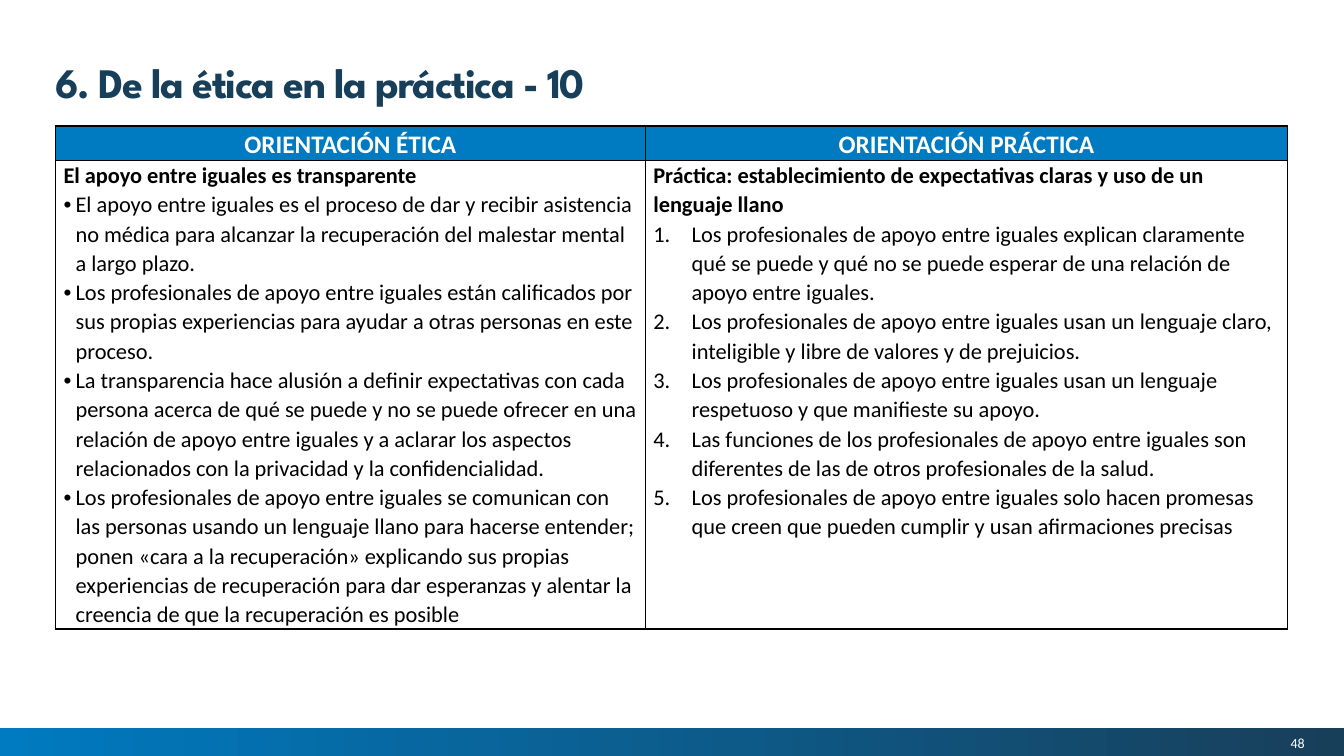
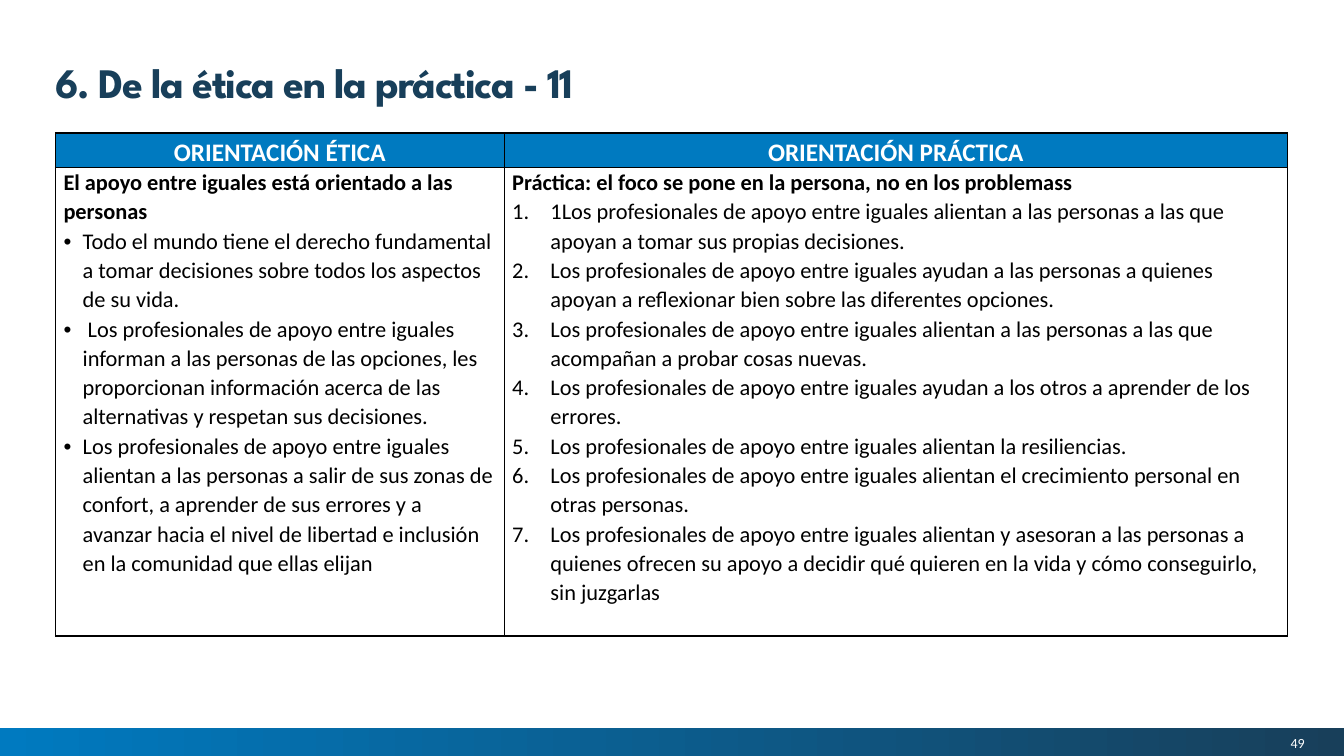
from lxml import etree
from pptx import Presentation
from pptx.dml.color import RGBColor
from pptx.enum.shapes import MSO_SHAPE
from pptx.enum.text import MSO_ANCHOR, PP_ALIGN
from pptx.oxml.ns import qn
from pptx.util import Inches, Pt

COLORS = {"blue": "007AC0", "navy": "183F5A", "white": "FFFFFF", "black": "000000"}
BODY_FONT = "Calibri"
TITLE_FONT = "League Spartan"
SLIDE_W, SLIDE_H = 13.33, 7.5
HEADERS = ["ORIENTACIÓN ÉTICA", "ORIENTACIÓN PRÁCTICA"]
ROW_HEIGHTS = [0.34, 4.65]

SLIDES = [
    {
        "title": "6. De la ética en la práctica - 10",
        "number": "48",
        "box": (0.55, 1.25),
        "cols": [5.85, 6.37],
        "bullet_indent": 0.12,
        "ethics": [
            "El apoyo entre iguales es transparente",
            "El apoyo entre iguales es el proceso de dar y recibir asistencia no médica para alcanzar la recuperación del malestar mental a largo plazo.",
            "Los profesionales de apoyo entre iguales están calificados por sus propias experiencias para ayudar a otras personas en este proceso.",
            "La transparencia hace alusión a definir expectativas con cada persona acerca de qué se puede y no se puede ofrecer en una relación de apoyo entre iguales y a aclarar los aspectos relacionados con la privacidad y la confidencialidad.",
            "Los profesionales de apoyo entre iguales se comunican con las personas usando un lenguaje llano para hacerse entender; ponen «cara a la recuperación» explicando sus propias experiencias de recuperación para dar esperanzas y alentar la creencia de que la recuperación es posible",
        ],
        "practice": [
            "Práctica: establecimiento de expectativas claras y uso de un lenguaje llano",
            "Los profesionales de apoyo entre iguales explican claramente qué se puede y qué no se puede esperar de una relación de apoyo entre iguales.",
            "Los profesionales de apoyo entre iguales usan un lenguaje claro, inteligible y libre de valores y de prejuicios.",
            "Los profesionales de apoyo entre iguales usan un lenguaje respetuoso y que manifieste su apoyo.",
            "Las funciones de los profesionales de apoyo entre iguales son diferentes de las de otros profesionales de la salud.",
            "Los profesionales de apoyo entre iguales solo hacen promesas que creen que pueden cumplir y usan afirmaciones precisas",
        ],
    },
    {
        "title": "6. De la ética en la práctica - 11",
        "number": "49",
        "box": (0.55, 1.32),
        "cols": [4.45, 7.77],
        "bullet_indent": 0.19,
        "ethics": [
            "El apoyo entre iguales está orientado a las personas",
            "Todo el mundo tiene el derecho fundamental a tomar decisiones sobre todos los aspectos de su vida.",
            " Los profesionales de apoyo entre iguales informan a las personas de las opciones, les proporcionan información acerca de las alternativas y respetan sus decisiones.",
            "Los profesionales de apoyo entre iguales alientan a las personas a salir de sus zonas de confort, a aprender de sus errores y a avanzar hacia el nivel de libertad e inclusión en la comunidad que ellas elijan",
        ],
        "practice": [
            "Práctica: el foco se pone en la persona, no en los problemass",
            "1Los profesionales de apoyo entre iguales alientan a las personas a las que apoyan a tomar sus propias decisiones.",
            "Los profesionales de apoyo entre iguales ayudan a las personas a quienes apoyan a reflexionar bien sobre las diferentes opciones.",
            "Los profesionales de apoyo entre iguales alientan a las personas a las que acompañan a probar cosas nuevas.",
            "Los profesionales de apoyo entre iguales ayudan a los otros a aprender de los errores.",
            "Los profesionales de apoyo entre iguales alientan la resiliencias.",
            "Los profesionales de apoyo entre iguales alientan el crecimiento personal en otras personas.",
            "Los profesionales de apoyo entre iguales alientan y asesoran a las personas a quienes ofrecen su apoyo a decidir qué quieren en la vida y cómo conseguirlo, sin juzgarlas",
        ],
    },
]


def rgb(name):
    return RGBColor.from_string(COLORS[name])


def format_runs(p, size, color, bold=False, font=BODY_FONT):
    for r in p.runs:
        r.font.name = font
        r.font.size = Pt(size)
        r.font.bold = bold
        r.font.color.rgb = rgb(color)


def add_text(s, box, text, margin=0.0):
    tb = s.shapes.add_textbox(*map(Inches, box))
    tf = tb.text_frame
    tf.word_wrap = True
    tf.margin_left = tf.margin_right = Inches(margin)
    tf.margin_top = tf.margin_bottom = Inches(margin / 2)
    tf.text = text
    return tf


def add_title(s, box, text):
    p = add_text(s, box, text, 0.1).paragraphs[0]
    p.line_spacing = Pt(33)
    format_runs(p, 30, "navy", True, TITLE_FONT)
    for r in p.runs:
        r.font._element.set("spc", "-100")


def add_footer(s, box, number):
    left, top, width, height = box
    band = s.shapes.add_shape(MSO_SHAPE.RECTANGLE, *map(Inches, box))
    band.shadow.inherit = False
    band.line.fill.background()
    band.fill.gradient()
    band.fill.gradient_angle = 0
    for stop, color in zip(band.fill.gradient_stops, ("blue", "navy")):
        stop.color.rgb = rgb(color)
    tf = add_text(s, (left + width - 2.19, top + 0.03, 1.8, height - 0.04), number)
    tf.vertical_anchor = MSO_ANCHOR.MIDDLE
    p = tf.paragraphs[0]
    p.alignment = PP_ALIGN.RIGHT
    format_runs(p, 10, "white")


def set_marker(p, indent, tag, **attrs):
    pPr = p._p.get_or_add_pPr()
    pPr.set("marL", str(Inches(indent)))
    pPr.set("indent", str(-Inches(indent)))
    if tag == "a:buChar":
        etree.SubElement(pPr, qn("a:buFont"), typeface="Arial")
    etree.SubElement(pPr, qn(tag), **attrs)


def style_cell(cell, fill):
    cell.margin_left = cell.margin_right = Inches(0.08)
    cell.margin_top = cell.margin_bottom = 0
    tcPr = cell._tc.get_or_add_tcPr()
    for side in "LRTB":
        ln = etree.SubElement(tcPr, qn(f"a:ln{side}"), w=str(Pt(1)))
        solid = etree.SubElement(ln, qn("a:solidFill"))
        etree.SubElement(solid, qn("a:srgbClr"), val=COLORS["black"])
    cell.fill.solid()
    cell.fill.fore_color.rgb = rgb(fill)


def fill_header(cell, text):
    style_cell(cell, "blue")
    p = cell.text_frame.paragraphs[0]
    p.text = text
    p.alignment = PP_ALIGN.CENTER
    p.line_spacing = 1.13
    format_runs(p, 18, "white", True)


def fill_body(cell, lines, indent, tag, **attrs):
    style_cell(cell, "white")
    tf = cell.text_frame
    for i, line in enumerate(lines):
        p = tf.add_paragraph() if i else tf.paragraphs[0]
        p.text = line
        p.line_spacing = 1.07
        if i:
            set_marker(p, indent, tag, **attrs)
        format_runs(p, 16, "black", bold=i == 0)


def add_guidance_table(s, box, data):
    left, top = box
    cols = data["cols"]
    frame = s.shapes.add_table(2, 2, Inches(left), Inches(top),
                               Inches(sum(cols)), Inches(sum(ROW_HEIGHTS)))
    table = frame.table
    table.first_row = table.horz_banding = False
    for i, (width, height) in enumerate(zip(cols, ROW_HEIGHTS)):
        table.columns[i].width = Inches(width)
        table.rows[i].height = Inches(height)
        fill_header(table.cell(0, i), HEADERS[i])
    fill_body(table.cell(1, 0), data["ethics"], data["bullet_indent"], "a:buChar", char="•")
    fill_body(table.cell(1, 1), data["practice"], 0.38, "a:buAutoNum", type="arabicPeriod")


def add_guidance_slide(prs, data):
    s = prs.slides.add_slide(prs.slide_layouts[6])
    add_footer(s, (0, 7.22, SLIDE_W, 0.28), data["number"])
    add_guidance_table(s, data["box"], data)
    add_title(s, (0.45, 0.55, 10.71, 0.47), data["title"])


def main():
    prs = Presentation()
    prs.slide_width = Inches(SLIDE_W)
    prs.slide_height = Inches(SLIDE_H)
    for data in SLIDES:
        add_guidance_slide(prs, data)
    prs.save("out.pptx")


if __name__ == "__main__":
    main()
